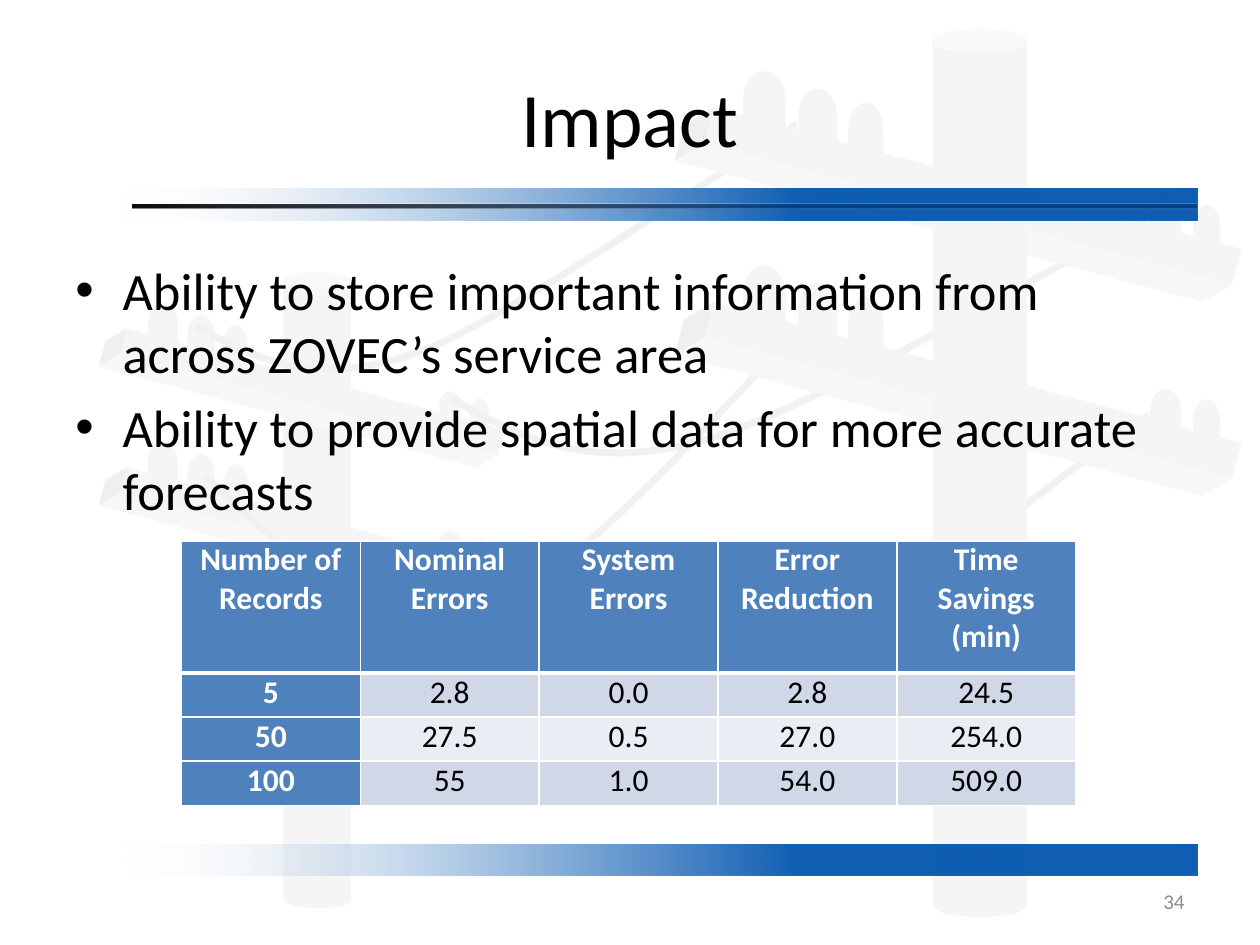
from lxml.etree import SubElement
from pptx import Presentation
from pptx.dml.color import RGBColor
from pptx.enum.shapes import MSO_SHAPE
from pptx.enum.text import MSO_ANCHOR, PP_ALIGN
from pptx.oxml import parse_xml
from pptx.oxml.ns import nsdecls, qn
from pptx.util import Pt

FONT = "Calibri"
WHITE, BLACK, GRAY = "FFFFFF", "000000", "BFBFBF"
TABLE_BLUE, BANDS = "4F81BD", ("D0D8E8", "E9EDF4")

# Large pole, in points. Arms are placed from the pole, insulators from an arm.
POLE_SIZE = (54, 507.5)
ARM_OFFSETS = [(-148.5, 194), (-148.5, 83)]
ARM_SIZE = (326, 35)
INSULATORS = [
    (36, -55.5, 32.5, 25),
    (66.5, -44.5, 32.5, 23),
    (94, -35.5, 32.5, 21),
    (269, 14.5, 25, 19),
    (292.5, 21.5, 25, 16.5),
]
# Each wire is a start point followed by the three points of each curve.
WIRES = [
    [(117, 272), (166, 318), (216, 365), (275, 348.5), (333, 333), (441, 198), (471, 176)],
    [(256, 307), (318, 345), (380, 382), (448, 370), (516, 357), (634, 243), (666, 233)],
    [(112, 186.5), (145, 204.5), (178, 222), (237, 202), (296, 182), (458, 64), (465, 67)],
    [(258, 227.5), (295, 249), (333, 270), (401, 252), (469.5, 234), (648, 124), (666, 121)],
]
RULE_STOPS = [(0, "FFFFFF", 100), (23, "08060A", 100), (75, "08060A", 100), (100, "FFFFFF", 100)]
BAND_STOPS = [(5, "FFFFFF", 0), (65, "0054AF", 75)]

TABLE_ROWS = [
    ["Number of Records", "Nominal Errors", "System Errors", "Error Reduction", "Time Savings (min)"],
    ["5", "2.8", "0.0", "2.8", "24.5"],
    ["50", "27.5", "0.5", "27.0", "254.0"],
    ["100", "55", "1.0", "54.0", "509.0"],
]


def color(value):
    return RGBColor.from_string(value)


def add_box(slide, kind, left, top, width, height, fill=None, line=None):
    shape = slide.shapes.add_shape(kind, Pt(left), Pt(top), Pt(width), Pt(height))
    shape.shadow.inherit = False
    if fill:
        shape.fill.solid()
        shape.fill.fore_color.rgb = color(fill)
    if line:
        shape.line.color.rgb = color(line)
        shape.line.width = Pt(0.75)
    else:
        shape.line.fill.background()
    return shape


def add_gradient_bar(slide, left, top, width, height, stops, angle):
    """Stops are (position, colour, opacity), both numbers in percent."""
    shape = add_box(slide, MSO_SHAPE.RECTANGLE, left, top, width, height, fill=WHITE)
    stop_xml = "".join(
        f'<a:gs pos="{position * 1000}"><a:srgbClr val="{value}">'
        f'<a:alpha val="{opacity * 1000}"/></a:srgbClr></a:gs>'
        for position, value, opacity in stops
    )
    gradient = parse_xml(
        f'<a:gradFill {nsdecls("a")} rotWithShape="1"><a:gsLst>{stop_xml}</a:gsLst>'
        f'<a:lin ang="{angle * 60000}" scaled="0"/></a:gradFill>'
    )
    properties = shape._element.spPr
    properties.replace(properties.find(qn("a:solidFill")), gradient)


def add_arm(slide, left, top, scale):
    for x, y, width, height in INSULATORS:
        insulator = add_box(slide, MSO_SHAPE.FLOWCHART_DELAY, left + x * scale, top + y * scale,
                            width * scale, height * scale, fill=GRAY, line=WHITE)
        insulator.rotation = 270
    width, height = ARM_SIZE
    beam = add_box(slide, MSO_SHAPE.CUBE, left, top, width * scale, height * scale, fill=GRAY)
    beam.adjustments[0] = 0.396
    beam.rotation = 15
    transform = beam._element.spPr.find(qn("a:xfrm"))
    transform.set("flipH", "1")
    transform.set("flipV", "1")


def add_pole(slide, left, top, scale, pole_in_front):
    def add_post():
        width, height = POLE_SIZE
        add_box(slide, MSO_SHAPE.CAN, left, top, width * scale, height * scale, fill=GRAY)

    if not pole_in_front:
        add_post()
    for x, y in ARM_OFFSETS:
        add_arm(slide, left + x * scale, top + y * scale, scale)
    if pole_in_front:
        add_post()


def add_wire(slide, points):
    """Draw a freeform whose segments are joined in threes into Bézier curves."""
    start, *others = [(Pt(x), Pt(y)) for x, y in points]
    builder = slide.shapes.build_freeform(*start)
    builder.add_line_segments(others, close=False)
    shape = builder.convert_to_shape()
    shape.shadow.inherit = False
    shape.fill.background()
    shape.line.color.rgb = color("A6A6A6")
    shape.line.width = Pt(4)
    outline = shape._element.spPr.find(".//" + qn("a:path"))
    segments = outline.findall(qn("a:lnTo"))
    for first in range(0, len(segments), 3):
        curve = SubElement(outline, qn("a:cubicBezTo"))
        for segment in segments[first:first + 3]:
            curve.append(segment[0])
            outline.remove(segment)


def add_background(slide):
    add_pole(slide, 162, 155.5, 0.716, pole_in_front=False)
    for points in WIRES:
        add_wire(slide, points)
    add_pole(slide, 533, 16.5, 1, pole_in_front=True)
    veil = add_box(slide, MSO_SHAPE.RECTANGLE, 0, 0, 720, 540, fill=WHITE, line=WHITE)
    veil_color = veil._element.spPr.find(qn("a:solidFill"))[0]
    SubElement(veil_color, qn("a:alpha")).set("val", "85000")
    for _ in range(2):
        add_gradient_bar(slide, 75.6, 116, 608.4, 3.6, RULE_STOPS, 270)
        for top in (108, 482.4):
            add_gradient_bar(slide, 36, top, 648, 18, BAND_STOPS, 0)


def write_text(frame, *texts, size, fill=BLACK, bold=False, align=PP_ALIGN.LEFT,
               bullet=False, gap=0, after=0):
    """Write one paragraph for each text, with gap points between them."""
    frame.word_wrap = True
    for index, text in enumerate(texts):
        paragraph = frame.add_paragraph() if index else frame.paragraphs[0]
        paragraph.text = text
        paragraph.alignment = align
        if index:
            paragraph.space_before = Pt(gap)
        if after:
            paragraph.space_after = Pt(after)
        if bullet:
            properties = paragraph._p.get_or_add_pPr()
            properties.set("marL", str(Pt(27)))
            properties.set("indent", str(Pt(-27)))
            SubElement(properties, qn("a:buFont")).set("typeface", "Arial")
            SubElement(properties, qn("a:buChar")).set("char", "•")
        font = paragraph.font
        font.name, font.size, font.bold = FONT, Pt(size), bold
        font.color.rgb = color(fill)


def add_text(slide, left, top, width, height, *texts, anchor=MSO_ANCHOR.TOP, **text_format):
    frame = slide.shapes.add_textbox(Pt(left), Pt(top), Pt(width), Pt(height)).text_frame
    frame.vertical_anchor = anchor
    write_text(frame, *texts, **text_format)


def set_borders(cell, **widths):
    properties = cell._tc.get_or_add_tcPr()
    for side in "LRTB":
        properties.append(parse_xml(
            f'<a:ln{side} {nsdecls("a")} w="{Pt(widths.get(side, 1))}">'
            f'<a:solidFill><a:srgbClr val="{WHITE}"/></a:solidFill></a:ln{side}>'
        ))


def add_results_table(slide):
    table = slide.shapes.add_table(len(TABLE_ROWS), len(TABLE_ROWS[0]), Pt(103.7), Pt(309),
                                   Pt(511), Pt(151.2)).table
    table.first_col = True
    table.horz_banding = False
    for column in table.columns:
        column.width = Pt(102.2)
    for row_index, values in enumerate(TABLE_ROWS):
        table.rows[row_index].height = Pt(25.2 if row_index else 75.6)
        for column_index, value in enumerate(values):
            cell = table.cell(row_index, column_index)
            heading = row_index == 0 or column_index == 0
            cell.margin_left = cell.margin_right = Pt(5)
            cell.margin_top = cell.margin_bottom = 0
            set_borders(cell, T=3 if row_index == 1 else 1, B=3 if row_index == 0 else 1)
            cell.fill.solid()
            cell.fill.fore_color.rgb = color(TABLE_BLUE if heading else BANDS[(row_index - 1) % 2])
            write_text(cell.text_frame, value, size=18, bold=heading, align=PP_ALIGN.CENTER,
                       fill=WHITE if heading else BLACK,
                       after=12 if value == TABLE_ROWS[0][-1] else 0)


def main():
    presentation = Presentation()
    presentation.slide_width, presentation.slide_height = Pt(720), Pt(540)
    slide = presentation.slides.add_slide(presentation.slide_layouts[6])
    add_background(slide)
    add_text(slide, 36, 21.6, 648, 90, "Impact", size=44, align=PP_ALIGN.CENTER,
             anchor=MSO_ANCHOR.MIDDLE)
    add_text(slide, 36, 144, 648, 280.8,
             "Ability to store important information from across ZOVEC’s service area",
             "Ability to provide spatial data for more accurate forecasts",
             size=30, bullet=True, gap=6)
    add_text(slide, 516, 500.4, 168, 28.8, "34", size=12, fill="8C8C8C", align=PP_ALIGN.RIGHT,
             anchor=MSO_ANCHOR.MIDDLE)
    add_results_table(slide)
    presentation.save("out.pptx")


if __name__ == "__main__":
    main()
